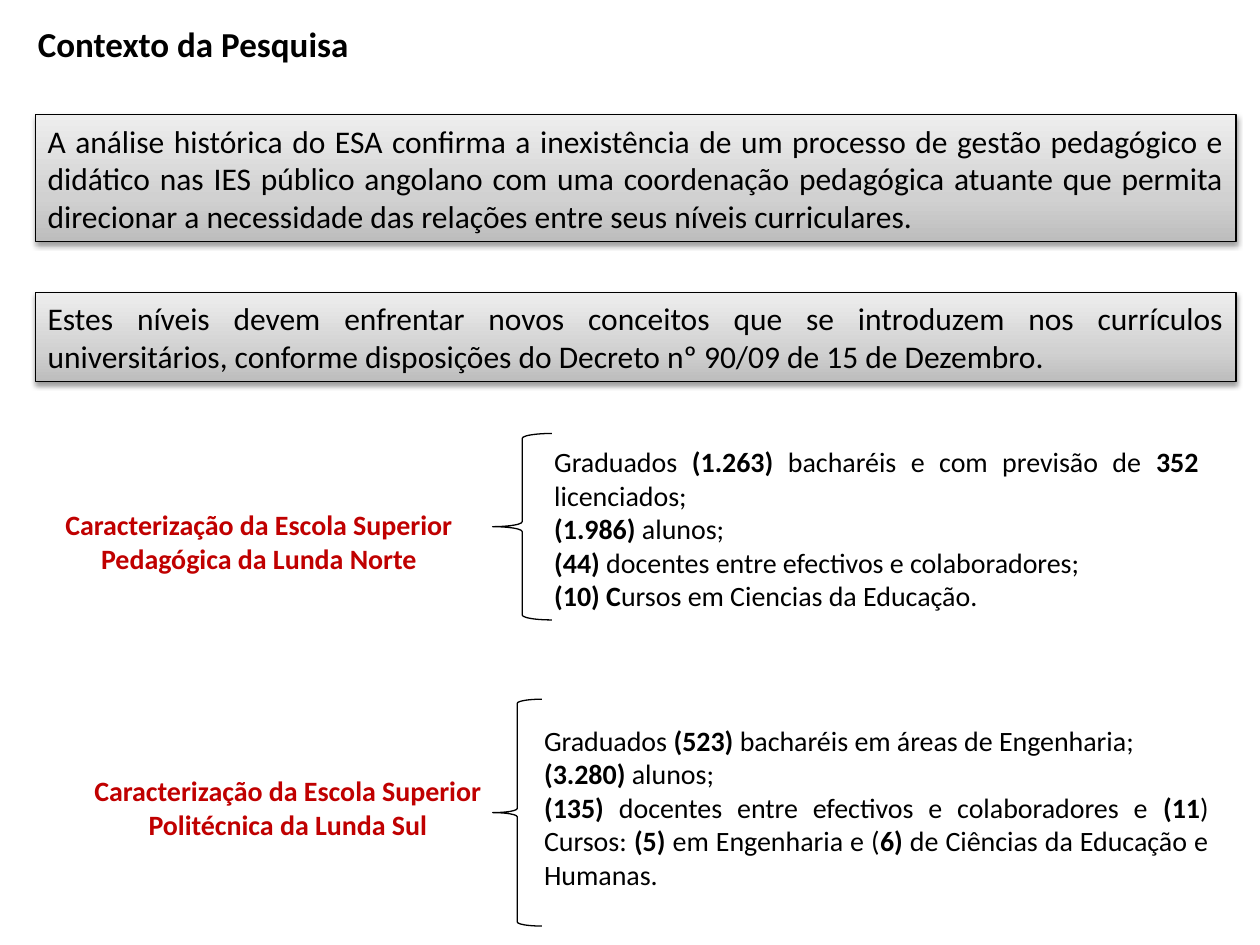
from copy import deepcopy

from lxml import etree
from pptx import Presentation
from pptx.dml.color import RGBColor
from pptx.enum.shapes import MSO_SHAPE
from pptx.enum.text import MSO_ANCHOR, MSO_AUTO_SIZE, PP_ALIGN
from pptx.oxml import parse_xml
from pptx.oxml.ns import qn
from pptx.util import Inches, Pt

# Content: ** switches bold on and off
TITLE = "**Contexto da Pesquisa**"
PANELS = [
    (0.91, 1.01, "A análise histórica do ESA confirma a inexistência de um processo de "
     "gestão pedagógico e didático nas IES público angolano com uma coordenação "
     "pedagógica atuante que permita direcionar a necessidade das relações entre "
     "seus níveis curriculares."),
    (2.32, 0.71, "Estes níveis devem enfrentar novos conceitos que se introduzem nos "
     "currículos universitários, conforme disposições do Decreto nº 90/09 de 15 de "
     "Dezembro."),
]
SCHOOLS = [
    {
        "label": "**Caracterização da Escola Superior Pedagógica da Lunda Norte**",
        "label_box": (0, 3.98, 4.11, 0.64),
        "brace_box": (3.91, 3.44, 0.47, 1.48),
        "facts_box": (4.3, 3.48, 5.31, 1.45),
        "facts": [
            "Graduados **(1.263)** bacharéis e com previsão de **352** licenciados;",
            "**(1.986)** alunos;",
            "**(44)** docentes entre efectivos e colaboradores;",
            "**(10) C**ursos em Ciencias da Educação.",
        ],
    },
    {
        "label": "**Caracterização da Escola Superior Politécnica da Lunda Sul**",
        "label_box": (0.23, 6.09, 4.11, 0.64),
        "brace_box": (3.91, 5.55, 0.39, 1.8),
        "facts_box": (4.22, 5.69, 5.47, 1.49),
        "facts": [
            "Graduados **(523)** bacharéis em áreas de Engenharia;",
            "**(3.280)** alunos;",
            "**(135)** docentes entre efectivos e colaboradores e **(11**) Cursos: "
            "**(5)** em Engenharia e (**6)** de Ciências da Educação e Humanas.",
        ],
    },
]

THEME = {
    "font": "Calibri",
    "black": RGBColor.from_string("000000"),
    "red": RGBColor.from_string("C00000"),
    "gradient": [(0, "BDBDBD"), (0.35, "D1D1D1"), (1, "EEEEEE")],
    "title_size": 20,
    "panel_size": 18,
    "body_size": 16,
    "line": 0.75,
}
SHADOW = (
    '<a:outerShdw xmlns:a="http://schemas.openxmlformats.org/drawingml/2006/main" '
    'blurRad="40000" dist="20000" dir="5400000" rotWithShape="0">'
    '<a:srgbClr val="000000"><a:alpha val="38000"/></a:srgbClr></a:outerShdw>'
)


def inches(box):
    return [Inches(value) for value in box]


def write_text(shape, paragraphs, size, color=THEME["black"], align=PP_ALIGN.LEFT,
               anchor=MSO_ANCHOR.TOP):
    frame = shape.text_frame
    frame.word_wrap = True
    frame.auto_size = MSO_AUTO_SIZE.NONE
    frame.vertical_anchor = anchor
    for index, text in enumerate(paragraphs):
        paragraph = frame.add_paragraph() if index else frame.paragraphs[0]
        paragraph.alignment = align
        for position, part in enumerate(text.split("**")):
            if part:
                run = paragraph.add_run()
                run.text = part
                run.font.name = THEME["font"]
                run.font.size = Pt(size)
                run.font.bold = position % 2 == 1
                run.font.color.rgb = color


def add_outlined(slide, kind, box):
    shape = slide.shapes.add_shape(kind, *inches(box))
    shape.shadow.inherit = False
    shape.line.color.rgb = THEME["black"]
    shape.line.width = Pt(THEME["line"])
    return shape


def add_panel(slide, box, text):
    panel = add_outlined(slide, MSO_SHAPE.RECTANGLE, box)
    panel.fill.gradient()
    panel.fill.gradient_angle = 90
    properties = panel.element.spPr
    stop_list = properties.find(".//" + qn("a:gsLst"))
    stop_list.append(deepcopy(stop_list[0]))
    for stop, (position, color) in zip(panel.fill.gradient_stops, THEME["gradient"]):
        stop.position = position
        stop.color.rgb = RGBColor.from_string(color)
    properties.find(qn("a:effectLst")).append(parse_xml(SHADOW))
    write_text(panel, [text], THEME["panel_size"], align=PP_ALIGN.JUSTIFY,
               anchor=MSO_ANCHOR.MIDDLE)


def add_school(slide, school):
    label = slide.shapes.add_textbox(*inches(school["label_box"]))
    write_text(label, [school["label"]], THEME["body_size"], color=THEME["red"],
               align=PP_ALIGN.CENTER)
    brace = add_outlined(slide, MSO_SHAPE.LEFT_BRACE, school["brace_box"])
    brace.fill.background()
    facts = slide.shapes.add_textbox(*inches(school["facts_box"]))
    write_text(facts, school["facts"], THEME["body_size"], align=PP_ALIGN.JUSTIFY)


def main():
    presentation = Presentation()
    presentation.slide_width, presentation.slide_height = Inches(10), Inches(7.5)
    slide = presentation.slides.add_slide(presentation.slide_layouts[5])

    # Title
    title = slide.shapes.title
    title.left, title.top, title.width, title.height = inches((0.2, 0.13, 3.26, 0.44))
    write_text(title, [TITLE], THEME["title_size"])

    # Shaded statements
    for top, height, text in PANELS:
        add_panel(slide, (0.28, top, 9.53, height), text)

    # Schools with their figures
    for school in SCHOOLS:
        add_school(slide, school)

    presentation.save("out.pptx")


if __name__ == "__main__":
    main()
